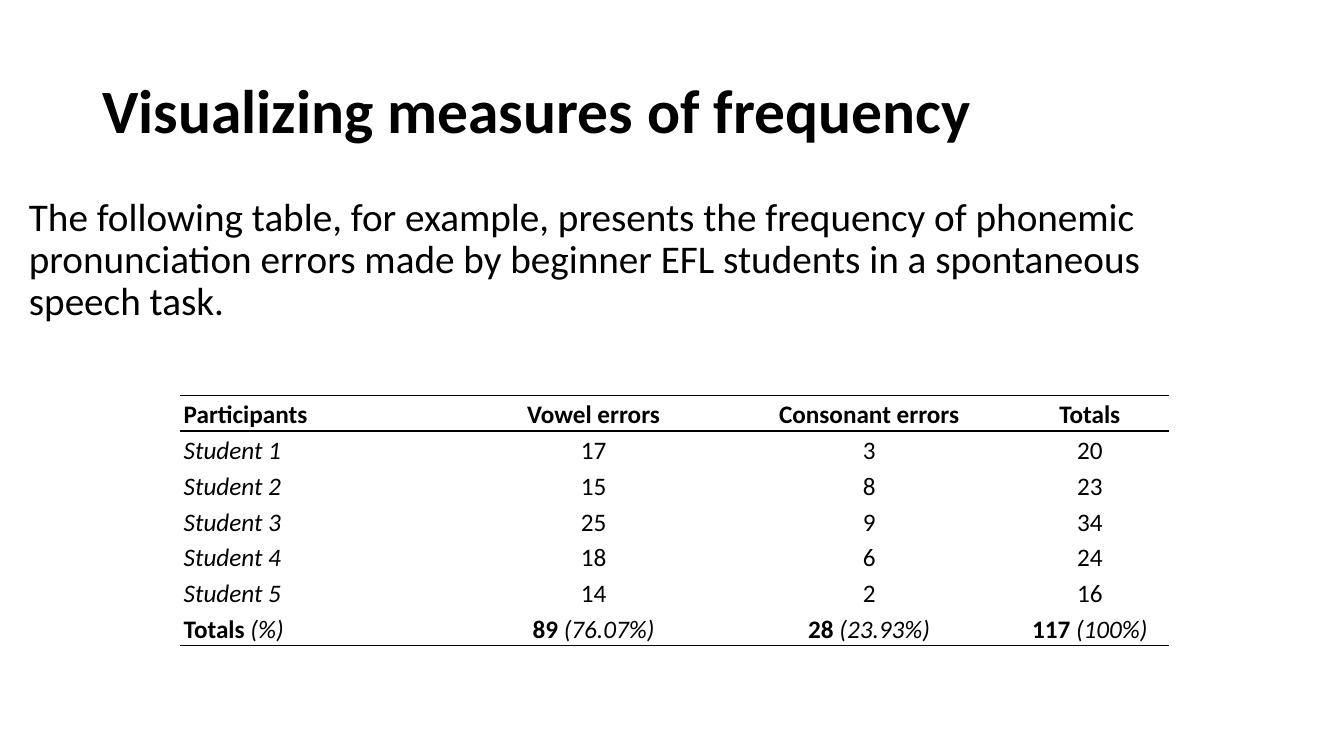
from dataclasses import dataclass

from lxml.etree import SubElement
from pptx import Presentation
from pptx.dml.color import RGBColor
from pptx.enum.text import MSO_ANCHOR, PP_ALIGN
from pptx.oxml.ns import qn
from pptx.util import Cm, Pt


@dataclass(frozen=True)
class Theme:
    font: str = "Calibri"
    ink: str = "000000"
    heading: int = 44
    body: int = 28
    table: int = 18
    rule: int = 1


THEME = Theme()
HEADERS = ["Participants", "", "Vowel errors", "Consonant errors", "Totals"]
ERRORS = [(17, 3), (15, 8), (25, 9), (18, 6), (14, 2)]
COLUMN_WIDTHS = [6.74, 0.25, 6.78, 7.11, 4.01]
ROW_HEIGHT = 0.9


def add_span(para, text, *, size, bold=False, italic=False):
    span = para.add_run()
    span.text = text
    span.font.name = THEME.font
    span.font.size = Pt(size)
    span.font.bold = bold
    span.font.italic = italic
    span.font.color.rgb = RGBColor.from_string(THEME.ink)


def add_text(page, text, left, top, width, height, **style):
    box = page.shapes.add_textbox(Cm(left), Cm(top), Cm(width), Cm(height))
    frame = box.text_frame
    frame.word_wrap = True
    frame.vertical_anchor = MSO_ANCHOR.MIDDLE
    para = frame.paragraphs[0]
    para.line_spacing = 0.9
    add_span(para, text, **style)


def set_borders(cell, ruled_sides):
    properties = cell._tc.get_or_add_tcPr()
    for side in "LRTB":
        line = SubElement(properties, qn(f"a:ln{side}"))
        if side in ruled_sides:
            line.set("w", str(Pt(THEME.rule)))
            fill = SubElement(line, qn("a:solidFill"))
            SubElement(fill, qn("a:srgbClr")).set("val", THEME.ink)
        else:
            SubElement(line, qn("a:noFill"))


def fill_cell(cell, spans, alignment, ruled_sides):
    cell.margin_left = cell.margin_right = Cm(0.1)
    cell.margin_top = cell.margin_bottom = 0
    set_borders(cell, ruled_sides)
    cell.fill.background()
    para = cell.text_frame.paragraphs[0]
    para.alignment = alignment
    para.line_spacing = 1.15
    for text, style in spans:
        add_span(para, text, size=THEME.table, **style)


def frequency_rows():
    bold, italic = {"bold": True}, {"italic": True}
    rows = [[[(text, bold)] if text else [] for text in HEADERS]]
    for number, (vowels, consonants) in enumerate(ERRORS, 1):
        counts = [[(str(n), {})] for n in (vowels, consonants, vowels + consonants)]
        rows.append([[(f"Student {number}", italic)], [], *counts])
    totals = [("Totals", "%"), None, ("89", "76.07%"), ("28", "23.93%"), ("117", "100%")]
    rows.append([
        [(f"{pair[0]} ", bold), (f"({pair[1]})", italic)] if pair else []
        for pair in totals
    ])
    return rows


def add_frequency_table(page, left, top):
    rows = frequency_rows()
    last = len(rows) - 1
    table = page.shapes.add_table(
        len(rows), len(HEADERS), Cm(left), Cm(top),
        Cm(sum(COLUMN_WIDTHS)), Cm(ROW_HEIGHT * len(rows)),
    ).table
    table.first_row = table.horz_banding = False
    for column, width in zip(table.columns, COLUMN_WIDTHS):
        column.width = Cm(width)
    ruled_sides = {0: "TB", 1: "T", last: "B"}
    for row_index, row in enumerate(rows):
        table.rows[row_index].height = Cm(ROW_HEIGHT)
        for column_index, spans in enumerate(row):
            alignment = PP_ALIGN.CENTER if column_index else PP_ALIGN.LEFT
            fill_cell(table.cell(row_index, column_index), spans, alignment,
                      ruled_sides.get(row_index, ""))


def main():
    deck = Presentation()
    deck.slide_width, deck.slide_height = Cm(33.87), Cm(19.05)
    page = deck.slides.add_slide(deck.slide_layouts[6])
    add_text(page, "Visualizing measures of frequency",
             2.33, 1.02, 29.21, 3.68, size=THEME.heading, bold=True)
    add_text(page, "The following table, for example, presents the frequency of "
             "phonemic pronunciation errors made by beginner EFL students in a "
             "spontaneous speech task.",
             0.48, 3.61, 29.21, 5.92, size=THEME.body)
    add_frequency_table(page, 4.53, 9.96)
    deck.save("out.pptx")


if __name__ == "__main__":
    main()
